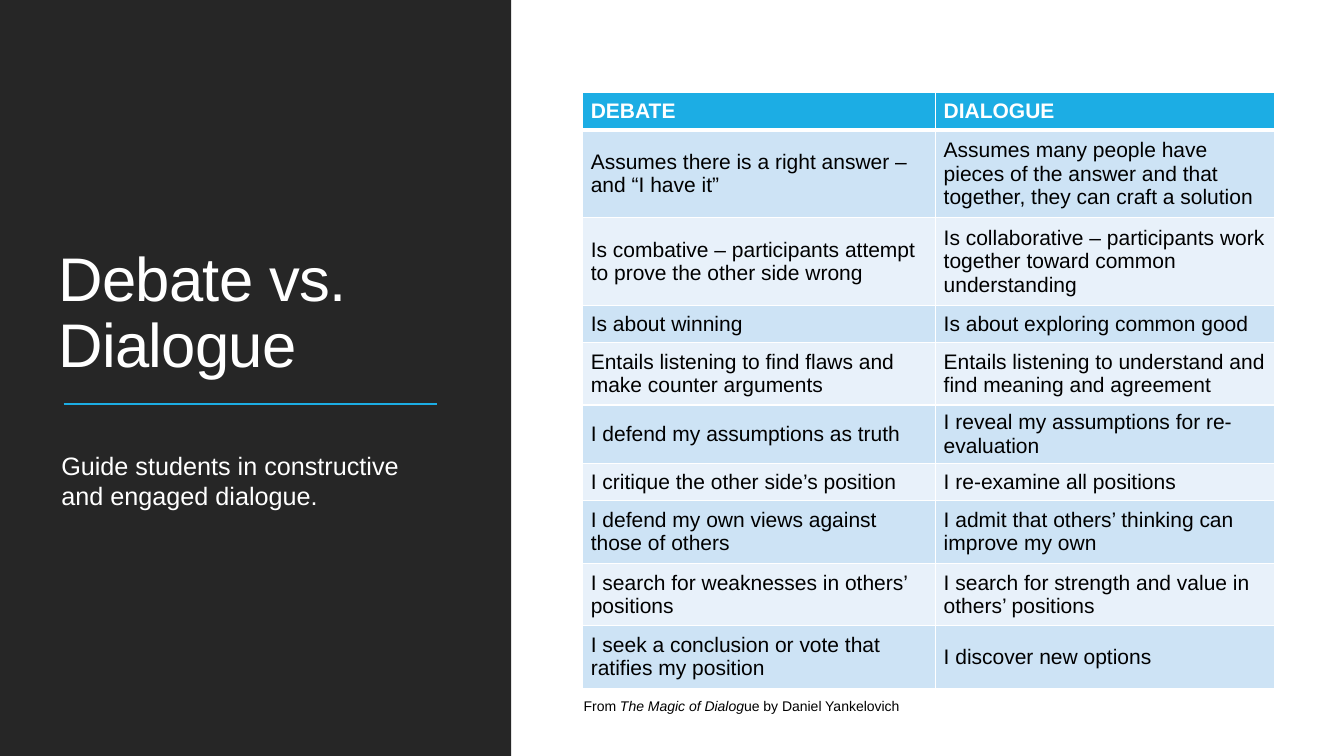
from lxml.etree import SubElement
from pptx import Presentation
from pptx.dml.color import RGBColor
from pptx.enum.shapes import MSO_CONNECTOR, MSO_SHAPE
from pptx.enum.text import MSO_ANCHOR as Anchor, MSO_AUTO_SIZE as AutoSize
from pptx.oxml import parse_xml
from pptx.oxml.ns import nsdecls, qn
from pptx.util import Emu, Pt

WHITE = RGBColor(0xFF, 0xFF, 0xFF)
BLACK = RGBColor(0x00, 0x00, 0x00)
CHARCOAL = RGBColor(0x26, 0x26, 0x26)
CYAN = RGBColor(0x1C, 0xAD, 0xE4)
BAND_DARK = RGBColor(0xCD, 0xE3, 0xF5)
BAND_LIGHT = RGBColor(0xE8, 0xF1, 0xFA)

COMPARISON = [
    ("DEBATE", "DIALOGUE"),
    ("Assumes there is a right answer – and “I have it”",
     "Assumes many people have pieces of the answer and that together, they can craft a solution"),
    ("Is combative – participants attempt to prove the other side wrong",
     "Is collaborative – participants work together toward common understanding"),
    ("Is about winning", "Is about exploring common good"),
    ("Entails listening to find flaws and make counter arguments",
     "Entails listening to understand and find meaning and agreement"),
    ("I defend my assumptions as truth", "I reveal my assumptions for re-evaluation"),
    ("I critique the other side’s position", "I re-examine all positions"),
    ("I defend my own views against those of others",
     "I admit that others’ thinking can improve my own"),
    ("I search for weaknesses in others’ positions",
     "I search for strength and value in others’ positions"),
    ("I seek a conclusion or vote that ratifies my position", "I discover new options"),
]
COLUMN_WIDTHS = [350, 336]
ROW_HEIGHTS = [37, 87, 87, 37, 62, 55, 37, 62, 62, 62]


def px(count):
    """Convert px, 100 to the inch, into EMU."""
    return Emu(count * 9144)


def write_run(paragraph, text, size, color, font="Arial", bold=False, italic=False, tracking=None):
    """Append a formatted run; tracking is in hundredths of a point."""
    run = paragraph.add_run()
    run.text = text
    run.font.name = font
    run.font.size = Pt(size)
    run.font.color.rgb = color
    run.font.bold = bold
    run.font.italic = italic
    if tracking is not None:
        run.font._element.set("spc", str(tracking))


def set_borders(cell, color, bottom_width):
    """Border all four sides at 1 pt, except the bottom at its own width."""
    widths = {"lnL": 1, "lnR": 1, "lnT": 1, "lnB": bottom_width}
    properties = cell._tc.get_or_add_tcPr()
    for position, (side, width) in enumerate(widths.items()):
        properties.insert(position, parse_xml(
            f'<a:{side} {nsdecls("a")} w="{Pt(width)}"><a:solidFill>'
            f'<a:srgbClr val="{color}"/></a:solidFill></a:{side}>'))


class SlideBuilder:
    def __init__(self, slide):
        self.shapes = slide.shapes

    def panel(self, left, top, width, height, color):
        panel = self.shapes.add_shape(
            MSO_SHAPE.RECTANGLE, px(left), px(top), px(width), px(height))
        panel.shadow.inherit = False
        panel.fill.solid()
        panel.fill.fore_color.rgb = color
        panel.line.fill.background()

    def rule(self, left, top, right, color, width):
        rule = self.shapes.add_connector(
            MSO_CONNECTOR.STRAIGHT, px(left), px(top), px(right), px(top))
        rule.line.color.rgb = color
        rule.line.width = Pt(width)
        SubElement(rule._element.spPr, qn("a:effectLst"))

    def text(self, left, top, width, height, runs, anchor=Anchor.TOP,
             line_spacing=None, autosize=AutoSize.SHAPE_TO_FIT_TEXT, **style):
        """Add a one-paragraph box from (text, extra format) pairs."""
        frame = self.shapes.add_textbox(px(left), px(top), px(width), px(height)).text_frame
        frame.word_wrap = True
        frame.auto_size = autosize
        frame.vertical_anchor = anchor
        paragraph = frame.paragraphs[0]
        paragraph.line_spacing = line_spacing
        for words, extra in runs:
            write_run(paragraph, words, **style, **extra)

    def table(self, left, top, rows, column_widths, row_heights):
        table = self.shapes.add_table(
            len(rows), len(column_widths), px(left), px(top),
            px(sum(column_widths)), px(sum(row_heights))).table
        table.horz_banding = False
        for column, width in zip(table.columns, column_widths):
            column.width = px(width)
        for index, (row, height, entries) in enumerate(zip(table.rows, row_heights, rows)):
            row.height = px(height)
            header = index == 0
            fill = CYAN if header else BAND_DARK if index % 2 else BAND_LIGHT
            for cell, entry in zip(row.cells, entries):
                cell.vertical_anchor = Anchor.MIDDLE
                cell.margin_left = cell.margin_right = px(8)
                cell.margin_top = cell.margin_bottom = px(4)
                cell.fill.solid()
                cell.fill.fore_color.rgb = fill
                set_borders(cell, WHITE, 3 if header else 1)
                write_run(cell.text_frame.paragraphs[0], entry, size=15,
                          color=WHITE if header else BLACK, bold=header)


def main():
    deck = Presentation()
    deck.slide_width, deck.slide_height = px(1333), px(750)
    builder = SlideBuilder(deck.slides.add_slide(deck.slide_layouts[6]))

    builder.panel(0, 0, 507, 750, CHARCOAL)
    builder.text(48, 70, 400, 313, [("Debate vs. Dialogue", {"tracking": -50})],
                 anchor=Anchor.BOTTOM, line_spacing=0.9, autosize=AutoSize.NONE,
                 size=44, color=WHITE)
    builder.rule(63, 401, 433, CYAN, 1.5)
    builder.text(51, 442, 370, 71,
                 [("Guide students in constructive and engaged dialogue.", {})],
                 size=18, color=WHITE)
    builder.table(578, 92, COMPARISON, COLUMN_WIDTHS, ROW_HEIGHTS)
    builder.text(569, 687, 456, 27,
                 [("From ", {}), ("The Magic of Dialog", {"italic": True}),
                  ("ue by Daniel Yankelovich", {})],
                 size=10, color=BLACK)
    deck.save("out.pptx")


if __name__ == "__main__":
    main()
